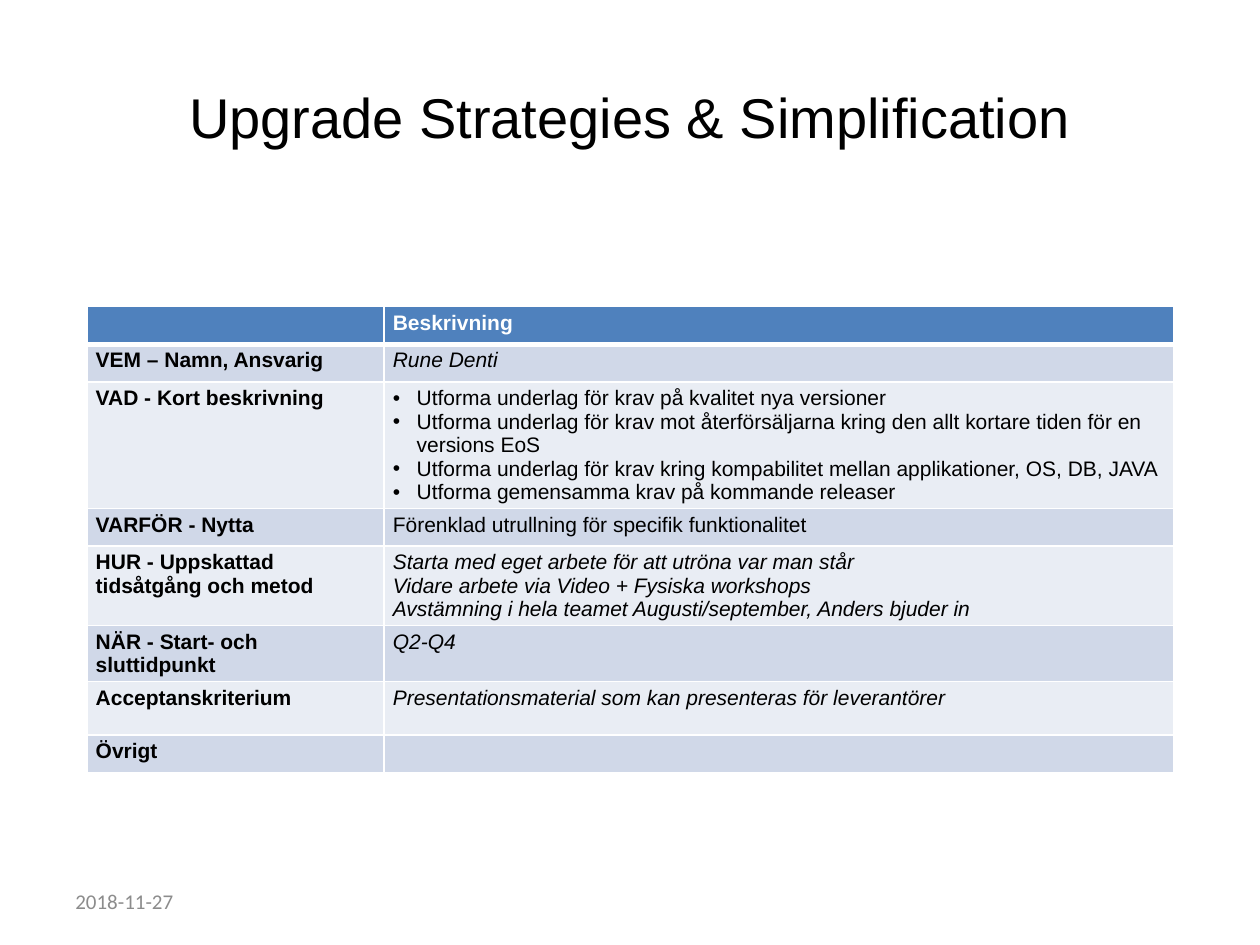
from copy import deepcopy
from dataclasses import dataclass

from lxml import etree
from pptx import Presentation
from pptx.dml.color import RGBColor
from pptx.enum.text import MSO_ANCHOR, PP_ALIGN
from pptx.oxml.ns import qn
from pptx.util import Cm, Pt

MIDDLE = MSO_ANCHOR.MIDDLE
LEFT, CENTER = PP_ALIGN.LEFT, PP_ALIGN.CENTER


@dataclass(frozen=True)
class Theme:
    font: str = "Arial"
    date_font: str = "Calibri"
    title_size: float = 32
    text_size: float = 12
    black: str = "000000"
    white: str = "FFFFFF"
    grey: str = "8C8C8C"
    header: str = "4F81BD"
    bands: tuple[str, str] = ("D0D8E8", "E9EDF4")
    rule: float = 1
    header_rule: float = 3


@dataclass(frozen=True)
class Row:
    label: str
    lines: tuple[str, ...] = ("",)
    italic: bool = False
    bullet: bool = False
    height: float = 0.76


THEME = Theme()
ROWS = [
    Row("VEM – Namn, Ansvarig", ("Rune Denti",), italic=True),
    Row("VAD - Kort beskrivning", (
        "Utforma underlag för krav på kvalitet nya versioner",
        "Utforma underlag för krav mot återförsäljarna kring den allt kortare "
        "tiden för en versions EoS",
        "Utforma underlag för krav kring kompabilitet mellan applikationer, OS, DB, JAVA",
        "Utforma gemensamma krav på kommande releaser",
    ), bullet=True),
    Row("VARFÖR - Nytta", ("Förenklad utrullning för specifik funktionalitet",)),
    Row("HUR - Uppskattad tidsåtgång och metod", (
        "Starta med eget arbete för att utröna var man står\n"
        "Vidare arbete via Video + Fysiska workshops\n"
        "Avstämning i hela teamet Augusti/september, Anders bjuder in",
    ), italic=True),
    Row("NÄR - Start- och sluttidpunkt", ("Q2-Q4",), italic=True),
    Row("Acceptanskriterium",
        ("Presentationsmaterial som kan presenteras för leverantörer",),
        italic=True, height=1.07),
    Row("Övrigt"),
]


def write(tf, *lines: str, size: float = THEME.text_size, font: str = THEME.font,
          color: str = THEME.black, bold: bool = False, italic: bool = False,
          align=LEFT, bullet: bool = False) -> None:
    """Fill a text frame with one paragraph per line, newlines being line breaks."""
    for i, line in enumerate(lines):
        p = tf.paragraphs[0] if i == 0 else tf.add_paragraph()
        p.text = line
        p.alignment = align
        if bullet:
            add_bullet(p)
        for r in p.runs:
            r.font.size, r.font.name = Pt(size), font
            r.font.bold, r.font.italic = bold, italic
            r.font.color.rgb = RGBColor.from_string(color)
        # Line breaks and empty paragraphs take the text size too
        for br in p._p.findall(qn("a:br")):
            br.append(deepcopy(p.runs[0]._r.rPr))
        if not line:
            end = etree.SubElement(p._p, qn("a:endParaRPr"))
            end.set("sz", str(int(size * 100)))


def add_bullet(p) -> None:
    pPr = p._p.get_or_add_pPr()
    pPr.set("marL", str(Cm(0.48)))
    pPr.set("indent", str(-Cm(0.48)))
    etree.SubElement(pPr, qn("a:buFont")).set("typeface", THEME.font)
    etree.SubElement(pPr, qn("a:buChar")).set("char", "•")


def set_border(cell, side: str, width: float) -> None:
    ln = etree.SubElement(cell._tc.get_or_add_tcPr(), qn(f"a:ln{side}"))
    ln.set("w", str(Pt(width)))
    fill = etree.SubElement(ln, qn("a:solidFill"))
    etree.SubElement(fill, qn("a:srgbClr")).set("val", THEME.white)


def style_cell(cell, fill: str, top: float = THEME.rule, bottom: float = THEME.rule) -> None:
    cell.margin_left = cell.margin_right = Cm(0.18)
    cell.margin_top = cell.margin_bottom = Cm(0.09)
    for side, width in zip("LRTB", (THEME.rule, THEME.rule, top, bottom)):
        set_border(cell, side, width)
    cell.fill.solid()
    cell.fill.fore_color.rgb = RGBColor.from_string(fill)


def add_plan_table(s) -> None:
    frame = s.shapes.add_table(len(ROWS) + 1, 2, Cm(1.75), Cm(6.18), Cm(21.92), Cm(9.83))
    table = frame.table
    for column, width in zip(table.columns, (5.99, 15.93)):
        column.width = Cm(width)

    # Header row
    table.rows[0].height = Cm(0.76)
    for cell, text in zip(table.rows[0].cells, ("", "Beskrivning")):
        style_cell(cell, THEME.header, bottom=THEME.header_rule)
        write(cell.text_frame, text, color=THEME.white, bold=True)

    # Banded body rows
    for i, row in enumerate(ROWS):
        table.rows[i + 1].height = Cm(row.height)
        label, description = table.rows[i + 1].cells
        for cell in (label, description):
            style_cell(cell, THEME.bands[i % 2],
                       top=THEME.header_rule if i == 0 else THEME.rule)
        write(label.text_frame, row.label, bold=True)
        write(description.text_frame, *row.lines, italic=row.italic, bullet=row.bullet)
    frame.height = Cm(9.83)


def place(sp, left: float, top: float, width: float, height: float) -> None:
    sp.left, sp.top, sp.width, sp.height = map(Cm, (left, top, width, height))


def main() -> None:
    prs = Presentation()
    prs.slide_width, prs.slide_height = Cm(25.4), Cm(19.05)
    s = prs.slides.add_slide(prs.slide_layouts[5])

    # Title
    title = s.shapes.title
    place(title, 1.27, 0.76, 22.86, 3.18)
    title.text_frame.vertical_anchor = MIDDLE
    write(title.text_frame, "Upgrade Strategies & Simplification",
          size=THEME.title_size, align=CENTER)

    add_plan_table(s)

    # Date
    date = s.shapes.add_textbox(Cm(1.27), Cm(17.66), Cm(5.93), Cm(1.01))
    date.text_frame.word_wrap = True
    date.text_frame.vertical_anchor = MIDDLE
    write(date.text_frame, "2018-11-27", font=THEME.date_font, color=THEME.grey)

    prs.save("out.pptx")


if __name__ == "__main__":
    main()
